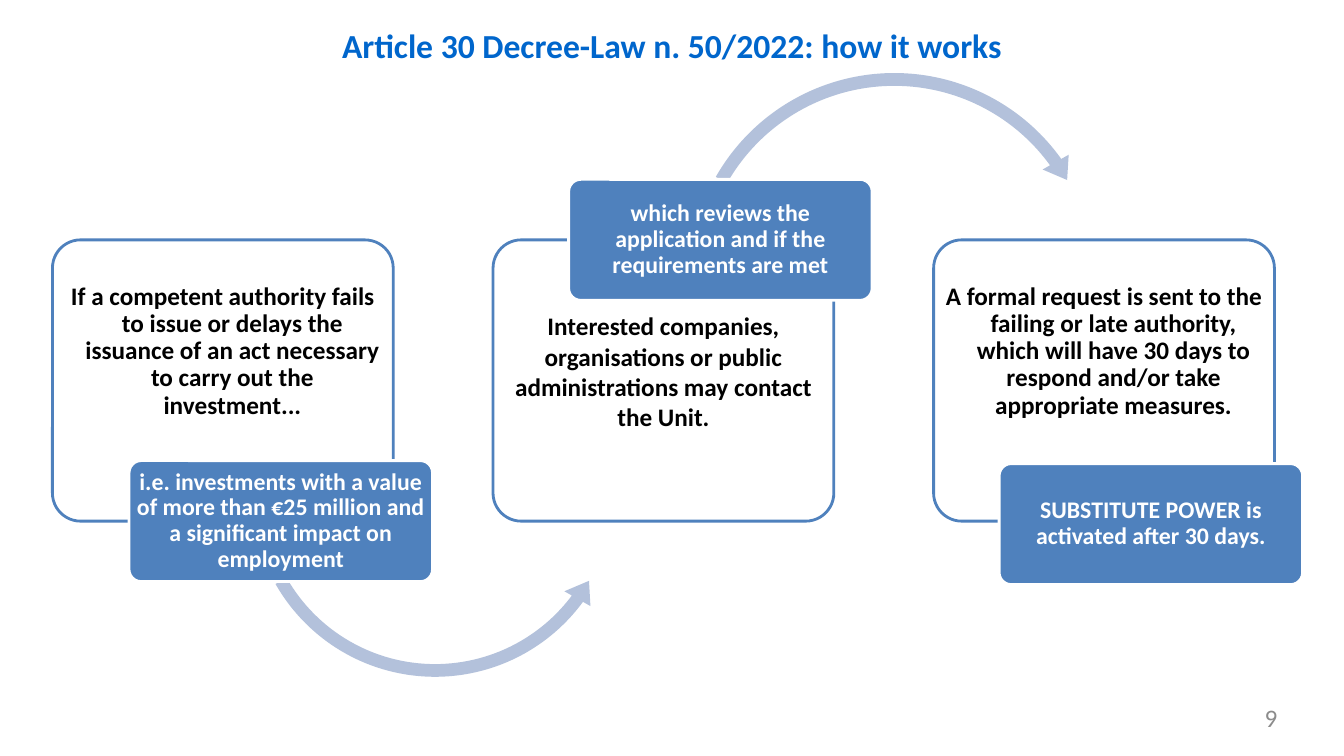
"""Build the slide on how Article 30 works, as three linked steps."""
from dataclasses import dataclass

from pptx import Presentation
from pptx.dml.color import RGBColor
from pptx.enum.shapes import MSO_SHAPE
from pptx.enum.text import MSO_ANCHOR, MSO_AUTO_SIZE, PP_ALIGN
from pptx.util import Inches, Pt

ROUND = MSO_SHAPE.ROUNDED_RECTANGLE
OVER = MSO_SHAPE.CIRCULAR_ARROW
UNDER = MSO_SHAPE.LEFT_CIRCULAR_ARROW
TOP, MIDDLE = MSO_ANCHOR.TOP, MSO_ANCHOR.MIDDLE
CENTER, RIGHT = PP_ALIGN.CENTER, PP_ALIGN.RIGHT
FIXED = MSO_AUTO_SIZE.NONE


@dataclass(frozen=True)
class Theme:
    font: str = "Calibri"
    title: str = "0066CC"
    blue: str = "4F81BD"
    pale: str = "B3C1DB"
    white: str = "FFFFFF"
    black: str = "000000"
    gray: str = "8C8C8C"
    head: int = 24
    body: int = 18
    note: int = 17
    edge: int = 2


@dataclass(frozen=True)
class Style:
    color: str
    size: int
    bold: bool = True
    align: int = CENTER
    anchor: int = TOP
    pads: tuple = (0, 0, 0, 0)
    lead: float = 1.0
    hang: float = 0


@dataclass(frozen=True)
class Arc:
    kind: int
    box: tuple
    adj: tuple


@dataclass(frozen=True)
class Step:
    text: str
    style: Style
    tag: str
    spot: tuple
    arc: Arc | None = None


THEME = Theme()
LISTED = Style(THEME.black, THEME.body, pads=(0.03, 0.35, 0.03, 0), lead=0.9, hang=0.19)
PLAIN = Style(THEME.black, THEME.body, pads=(0.03, 0.62, 0.03, 0))
TAG = Style(THEME.white, THEME.note, anchor=MIDDLE, pads=(0.04, 0.02, 0.04, 0.02), lead=0.9)
TITLE = Style(THEME.title, THEME.head)
PAGE = Style(THEME.gray, THEME.body, bold=False, align=RIGHT)

LEFT, PITCH, ROW = 0.52, 4.37, 2.38
CARD, LABEL = (3.38, 2.79), (3.01, 1.2)
STEPS = (
    Step("If a competent authority fails to issue or delays the issuance of an act "
         "necessary to carry out the investment...", LISTED,
         "i.e. investments with a value of more than €25 million and a significant "
         "impact on employment", (1.28, 4.57),
         Arc(UNDER, (2.41, 2.99, 3.81, 3.81), (0.033, 4.133, 21.888, 90.245, 0.039))),
    Step("Interested companies, organisations or public administrations may contact "
         "the Unit.", PLAIN,
         "which reviews the application and if the requirements are met", (5.64, 1.78),
         Arc(OVER, (6.75, 0.64, 4.24, 4.24), (0.03, 3.681, 194.564, 125.755, 0.035))),
    Step("A formal request is sent to the failing or late authority, which will have "
         "30 days to respond and/or take appropriate measures.", LISTED,
         "SUBSTITUTE POWER is activated after 30 days.", (9.91, 4.6)),
)


def apply(item, values: dict) -> None:
    """Set each named attribute on the item."""
    for name, value in values.items():
        setattr(item, name, value)


def write(shape, text: str, style: Style) -> None:
    """Put one styled paragraph in a shape."""
    frame = shape.text_frame
    left, top, right, bottom = map(Inches, style.pads)
    apply(frame, {"text": text, "word_wrap": True, "auto_size": FIXED,
                  "vertical_anchor": style.anchor, "margin_left": left,
                  "margin_top": top, "margin_right": right, "margin_bottom": bottom})
    para = frame.paragraphs[0]
    apply(para, {"alignment": style.align, "line_spacing": style.lead,
                 "space_before": Pt(0)})
    if style.hang:
        props = para._p.get_or_add_pPr()
        props.set("marL", str(Inches(style.hang)))
        props.set("indent", str(-Inches(style.hang)))
    font = para.runs[0].font
    apply(font, {"name": THEME.font, "size": Pt(style.size), "bold": style.bold})
    font.color.rgb = RGBColor.from_string(style.color)


def draw(slide, kind: int, box: tuple, adj: tuple, fill: str, line: str | None = None):
    """Add a filled preset shape with an optional outline."""
    shape = slide.shapes.add_shape(kind, *map(Inches, box))
    shape.shadow.inherit = False
    for index, value in enumerate(adj):
        shape.adjustments[index] = value
    shape.fill.solid()
    shape.fill.fore_color.rgb = RGBColor.from_string(fill)
    if line:
        shape.line.color.rgb = RGBColor.from_string(line)
        shape.line.width = Pt(THEME.edge)
    else:
        shape.line.fill.background()
    return shape


def place(slide, index: int, step: Step) -> None:
    """Draw a step with its card, arrow and tag."""
    box = (LEFT + index * PITCH, ROW, *CARD)
    card = draw(slide, ROUND, box, (0.1,), THEME.white, THEME.blue)
    write(card, step.text, step.style)
    if step.arc:
        draw(slide, step.arc.kind, step.arc.box, step.arc.adj, THEME.pale)
    tag = draw(slide, ROUND, (*step.spot, *LABEL), (0.1,), THEME.blue, THEME.white)
    write(tag, step.tag, TAG)


def main() -> None:
    """Build and save the slide."""
    deck = Presentation()
    apply(deck, {"slide_width": Inches(13.33), "slide_height": Inches(7.5)})
    slide = deck.slides.add_slide(deck.slide_layouts[5])
    title = slide.shapes.title
    apply(title, {"left": Inches(0.41), "top": Inches(0.25),
                  "width": Inches(12.51), "height": Inches(0.81)})
    write(title, "Article 30 Decree-Law n. 50/2022: how it works", TITLE)
    page = slide.shapes.add_textbox(*map(Inches, (9.6, 6.97, 3.07, 0.38)))
    write(page, "9", PAGE)
    for index, step in enumerate(STEPS):
        place(slide, index, step)
    deck.save("out.pptx")


if __name__ == "__main__":
    main()
